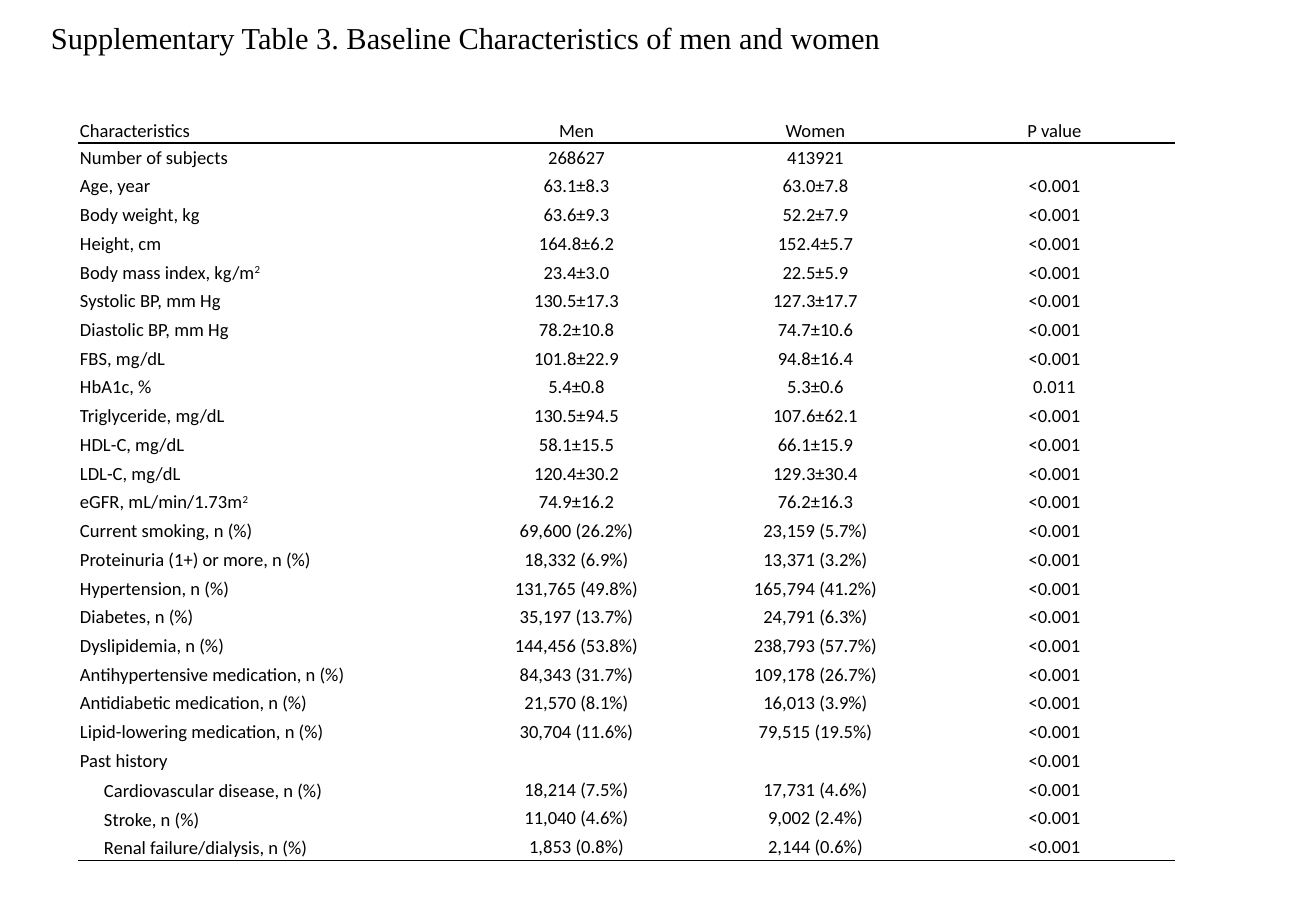
import lxml.etree
import pptx
import pptx.dml.color
import pptx.enum.text
import pptx.oxml.ns
import pptx.util

# Content
TITLE = "Supplementary Table 3. Baseline Characteristics of men and women"
HEADER = ("Characteristics", "Men", "Women", "P value")
# A caret in a label starts a superscript
MEASURES = [
    ("Number of subjects", "268627", "413921", ""),
    ("Age, year", "63.1±8.3", "63.0±7.8", "<0.001"),
    ("Body weight, kg", "63.6±9.3", "52.2±7.9", "<0.001"),
    ("Height, cm", "164.8±6.2", "152.4±5.7", "<0.001"),
    ("Body mass index, kg/m^2", "23.4±3.0", "22.5±5.9", "<0.001"),
    ("Systolic BP, mm Hg", "130.5±17.3", "127.3±17.7", "<0.001"),
    ("Diastolic BP, mm Hg", "78.2±10.8", "74.7±10.6", "<0.001"),
    ("FBS, mg/dL", "101.8±22.9", "94.8±16.4", "<0.001"),
    ("HbA1c, %", "5.4±0.8", "5.3±0.6", "0.011"),
    ("Triglyceride, mg/dL", "130.5±94.5", "107.6±62.1", "<0.001"),
    ("HDL-C, mg/dL", "58.1±15.5", "66.1±15.9", "<0.001"),
    ("LDL-C, mg/dL", "120.4±30.2", "129.3±30.4", "<0.001"),
    ("eGFR, mL/min/1.73m^2", "74.9±16.2", "76.2±16.3", "<0.001"),
    ("Current smoking, n (%)", "69,600 (26.2%)", "23,159 (5.7%)", "<0.001"),
    ("Proteinuria (1+) or more, n (%)", "18,332 (6.9%)", "13,371 (3.2%)", "<0.001"),
    ("Hypertension, n (%)", "131,765 (49.8%)", "165,794 (41.2%)", "<0.001"),
    ("Diabetes, n (%)", "35,197 (13.7%)", "24,791 (6.3%)", "<0.001"),
    ("Dyslipidemia, n (%)", "144,456 (53.8%)", "238,793 (57.7%)", "<0.001"),
    ("Antihypertensive medication, n (%)", "84,343 (31.7%)", "109,178 (26.7%)", "<0.001"),
    ("Antidiabetic medication, n (%)", "21,570 (8.1%)", "16,013 (3.9%)", "<0.001"),
    ("Lipid-lowering medication, n (%)", "30,704 (11.6%)", "79,515 (19.5%)", "<0.001"),
    ("Past history", "", "", "<0.001"),
]
PAST_HISTORY = [
    ("Cardiovascular disease, n (%)", "18,214 (7.5%)", "17,731 (4.6%)", "<0.001"),
    ("Stroke, n (%)", "11,040 (4.6%)", "9,002 (2.4%)", "<0.001"),
    ("Renal failure/dialysis, n (%)", "1,853 (0.8%)", "2,144 (0.6%)", "<0.001"),
]
ROWS = [HEADER] + MEASURES + PAST_HISTORY

# Format and layout, lengths in px
COLORS = {"text": "000000", "rule": "000000", "grid": "FFFFFF"}
TITLE_FONT = {"name": "Times New Roman", "size": pptx.util.Pt(18)}
TABLE_FONT = {"name": "Calibri", "size": pptx.util.Pt(11)}
EMU_PER_PX = 7526
SLIDE_SIZE = (1316, 911)
TITLE_BOX = (39, 15, 1135, 50)
TABLE_LEFT, TABLE_TOP = 79, 119
COLUMN_WIDTHS = (378, 239, 239, 239)
HEADER_HEIGHT, BODY_HEIGHT = 24, 718
INDENT, INDENT_TOP = 24, 4


def px(length):
    return pptx.util.Emu(length * EMU_PER_PX)


def set_format(target, values):
    for name, value in values.items():
        setattr(target, name, value)


def add_run(paragraph, text, font):
    run = paragraph.add_run()
    run.text = text
    set_format(run.font, font)
    run.font.color.rgb = pptx.dml.color.RGBColor.from_string(COLORS["text"])
    return run


def add_child(parent, tag, **attributes):
    return lxml.etree.SubElement(parent, pptx.oxml.ns.qn(tag), **attributes)


def set_borders(cell, top, bottom):
    properties = cell._tc.get_or_add_tcPr()
    sides = {"a:lnL": "grid", "a:lnR": "grid", "a:lnT": top, "a:lnB": bottom}
    for tag, color in sides.items():
        line = add_child(properties, tag, w=str(pptx.util.Pt(1)))
        add_child(add_child(line, "a:solidFill"), "a:srgbClr", val=COLORS[color])


def fill_cell(cell, text, alignment, indented):
    set_format(cell, {
        "margin_left": px(1 + (INDENT if indented else 0)),
        "margin_right": px(1),
        "margin_top": px(INDENT_TOP if indented else 1),
        "margin_bottom": 0,
        "vertical_anchor": pptx.enum.text.MSO_ANCHOR.MIDDLE,
    })
    paragraph = cell.text_frame.paragraphs[0]
    paragraph.alignment = alignment
    base, _, superscript = text.partition("^")
    if base:
        add_run(paragraph, base, TABLE_FONT)
    if superscript:
        run = add_run(paragraph, superscript, TABLE_FONT)
        run._r.get_or_add_rPr().set("baseline", "30000")
    # Keeps rows with empty cells at the table's text size
    add_child(paragraph._p, "a:endParaRPr", sz="1100")


presentation = pptx.Presentation()
presentation.slide_width, presentation.slide_height = map(px, SLIDE_SIZE)
slide = presentation.slides.add_slide(presentation.slide_layouts[6])

# Title
title = slide.shapes.add_textbox(*map(px, TITLE_BOX)).text_frame
set_format(title, {
    "word_wrap": True,
    "vertical_anchor": pptx.enum.text.MSO_ANCHOR.MIDDLE,
})
title.paragraphs[0].line_spacing = 0.9
add_run(title.paragraphs[0], TITLE, TITLE_FONT)

# Table grid
table = slide.shapes.add_table(
    len(ROWS), len(HEADER), px(TABLE_LEFT), px(TABLE_TOP),
    px(sum(COLUMN_WIDTHS)), px(HEADER_HEIGHT + BODY_HEIGHT),
).table
set_format(table, {"first_row": False, "horz_banding": False})
for column, width in zip(table.columns, COLUMN_WIDTHS):
    column.width = px(width)
last_row = len(ROWS) - 1
edges = [0] + [HEADER_HEIGHT + round(BODY_HEIGHT * i / last_row) for i in range(len(ROWS))]
for row, top, bottom in zip(table.rows, edges, edges[1:]):
    row.height = px(bottom - top)

# Table cells
for row_index, values in enumerate(ROWS):
    top_color = "rule" if row_index == 1 else "grid"
    bottom_color = "rule" if row_index in (0, last_row) else "grid"
    for column_index, text in enumerate(values):
        is_label = column_index == 0
        cell = table.cell(row_index, column_index)
        alignment = pptx.enum.text.PP_ALIGN.LEFT if is_label else pptx.enum.text.PP_ALIGN.CENTER
        fill_cell(cell, text, alignment, is_label and values in PAST_HISTORY)
        set_borders(cell, top_color, bottom_color)
        cell.fill.background()

presentation.save("out.pptx")
